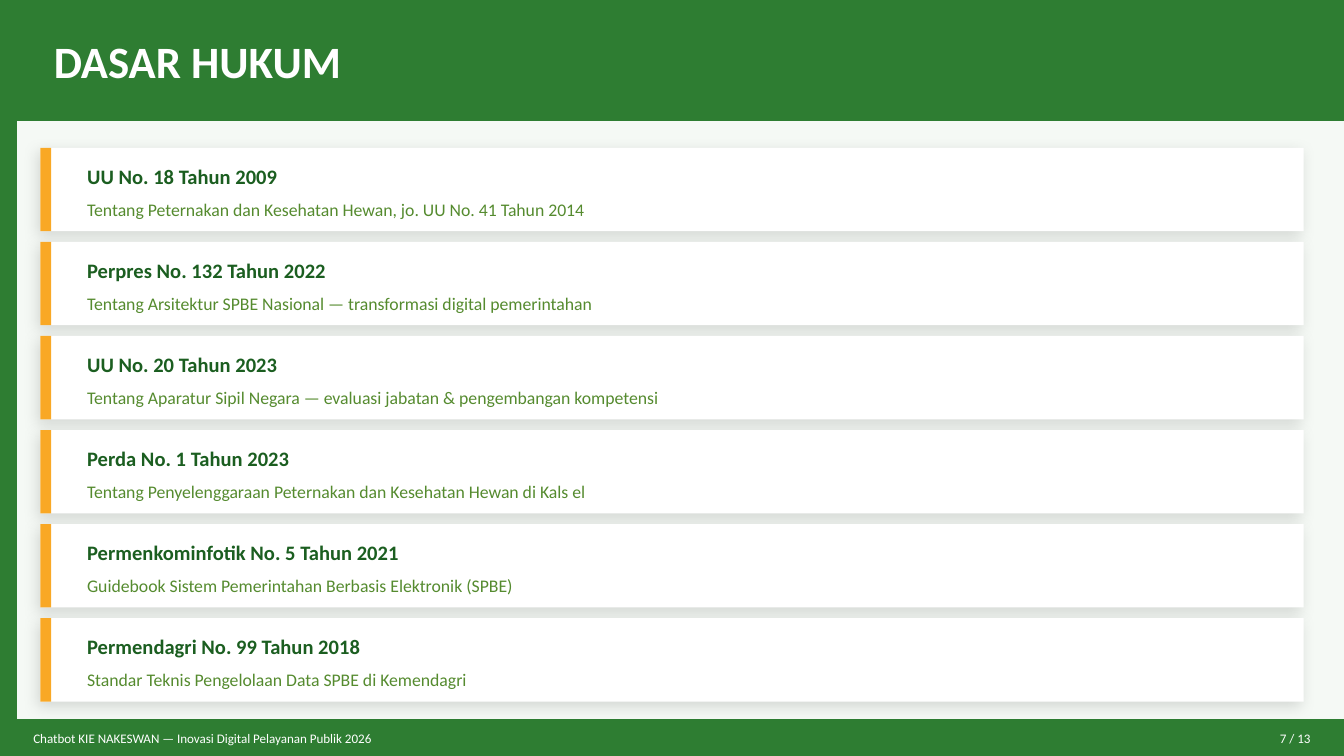
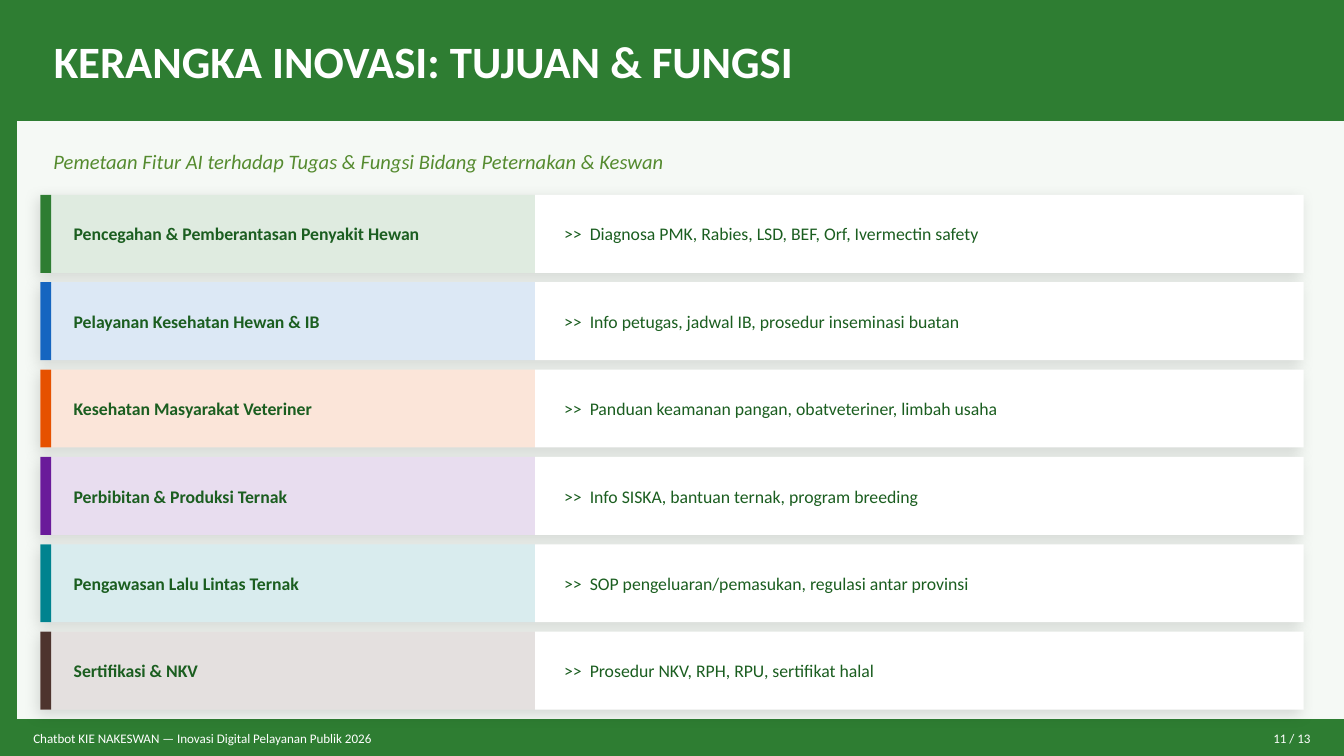
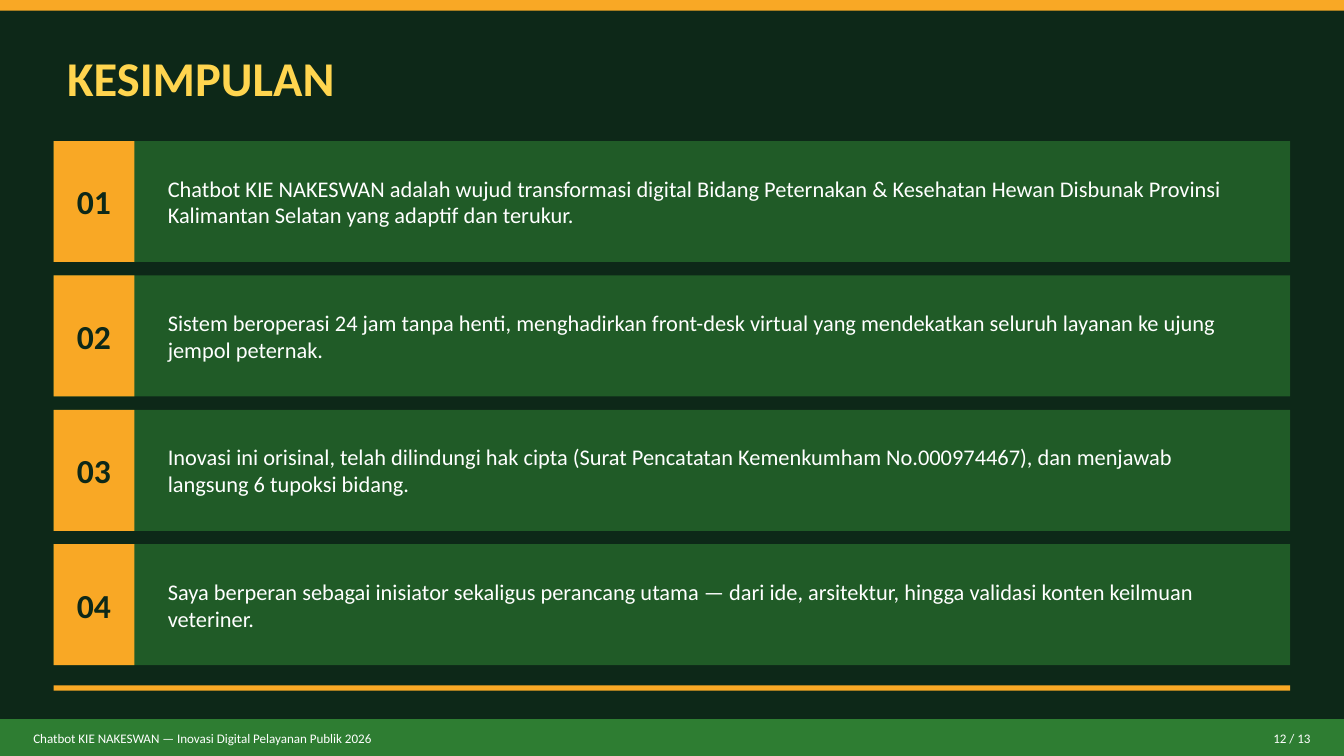
"""Builds three slides on the legal basis, framework and conclusions of a chatbot innovation."""
from lxml import etree
from pptx import Presentation
from pptx.dml.color import RGBColor
from pptx.enum import shapes, text
from pptx.oxml import ns
from pptx.util import Inches, Pt

FONT = "Calibri"
WHITE = RGBColor(0xFF, 0xFF, 0xFF)
PALE = RGBColor(0xF5, 0xF9, 0xF5)
NIGHT = RGBColor(0x0D, 0x28, 0x18)
GREEN = RGBColor(0x2E, 0x7D, 0x32)
FOREST = RGBColor(0x1B, 0x5E, 0x20)
OLIVE = RGBColor(0x55, 0x8B, 0x2F)
AMBER = RGBColor(0xF9, 0xA8, 0x25)
YELLOW = RGBColor(0xFF, 0xD5, 0x4F)
BLUE = RGBColor(0x15, 0x65, 0xC0)
ORANGE = RGBColor(0xE6, 0x51, 0x00)
PURPLE = RGBColor(0x6A, 0x1B, 0x9A)
TEAL = RGBColor(0x00, 0x83, 0x8F)
BROWN = RGBColor(0x4E, 0x34, 0x2E)

FOOTER = "Chatbot KIE NAKESWAN — Inovasi Digital Pelayanan Publik 2026"
SLIDE_HEIGHT = 5.62
TITLES = [
    ("DASAR HUKUM", "7 / 13", PALE, WHITE, 24, (0.3, 0, 9.7, 0.9)),
    ("KERANGKA INOVASI: TUJUAN & FUNGSI", "11 / 13", PALE, WHITE, 24, (0.3, 0, 9.7, 0.9)),
    ("KESIMPULAN", "12 / 13", NIGHT, YELLOW, 26, (0.4, 0.3, 9.2, 0.55)),
]
LAWS = [
    ("UU No. 18 Tahun 2009", "Tentang Peternakan dan Kesehatan Hewan, jo. UU No. 41 Tahun 2014"),
    ("Perpres No. 132 Tahun 2022", "Tentang Arsitektur SPBE Nasional — transformasi digital pemerintahan"),
    ("UU No. 20 Tahun 2023", "Tentang Aparatur Sipil Negara — evaluasi jabatan & pengembangan kompetensi"),
    ("Perda No. 1 Tahun 2023", "Tentang Penyelenggaraan Peternakan dan Kesehatan Hewan di Kals el"),
    ("Permenkominfotik No. 5 Tahun 2021", "Guidebook Sistem Pemerintahan Berbasis Elektronik (SPBE)"),
    ("Permendagri No. 99 Tahun 2018", "Standar Teknis Pengelolaan Data SPBE di Kemendagri"),
]
DUTIES = [
    (GREEN, "Pencegahan & Pemberantasan Penyakit Hewan", "Diagnosa PMK, Rabies, LSD, BEF, Orf, Ivermectin safety"),
    (BLUE, "Pelayanan Kesehatan Hewan & IB", "Info petugas, jadwal IB, prosedur inseminasi buatan"),
    (ORANGE, "Kesehatan Masyarakat Veteriner", "Panduan keamanan pangan, obatveteriner, limbah usaha"),
    (PURPLE, "Perbibitan & Produksi Ternak", "Info SISKA, bantuan ternak, program breeding"),
    (TEAL, "Pengawasan Lalu Lintas Ternak", "SOP pengeluaran/pemasukan, regulasi antar provinsi"),
    (BROWN, "Sertifikasi & NKV", "Prosedur NKV, RPH, RPU, sertifikat halal"),
]
CONCLUSIONS = [
    "Chatbot KIE NAKESWAN adalah wujud transformasi digital Bidang Peternakan & Kesehatan Hewan "
    "Disbunak Provinsi Kalimantan Selatan yang adaptif dan terukur.",
    "Sistem beroperasi 24 jam tanpa henti, menghadirkan front-desk virtual yang mendekatkan "
    "seluruh layanan ke ujung jempol peternak.",
    "Inovasi ini orisinal, telah dilindungi hak cipta (Surat Pencatatan Kemenkumham No.000974467), "
    "dan menjawab langsung 6 tupoksi bidang.",
    "Saya berperan sebagai inisiator sekaligus perancang utama — dari ide, arsitektur, hingga "
    "validasi konten keilmuan veteriner.",
]


def add_block(page, place, color, opacity=100, shadow=False):
    """Add a borderless rectangle, optionally see-through or with a soft shadow."""
    block = page.shapes.add_shape(shapes.MSO_SHAPE.RECTANGLE, *map(Inches, place))
    block.shadow.inherit = False
    block.fill.solid()
    block.fill.fore_color.rgb = color
    block.line.fill.background()
    if opacity < 100:
        tint = block.element.spPr.find(".//" + ns.qn("a:srgbClr"))
        etree.SubElement(tint, ns.qn("a:alpha"), val=str(opacity * 1000))
    if shadow:
        effects = block.element.spPr.find(ns.qn("a:effectLst"))
        outer = etree.SubElement(effects, ns.qn("a:outerShdw"), blurRad=str(Pt(8)), dist=str(Pt(3)),
                                 dir=str(135 * 60000), algn="bl", rotWithShape="0")
        shade = etree.SubElement(outer, ns.qn("a:srgbClr"), val="000000")
        etree.SubElement(shade, ns.qn("a:alpha"), val="12000")
    return block


def add_label(page, place, words, size, color, bold=False, align=text.PP_ALIGN.LEFT, box=None):
    """Write one paragraph into the given box, or into a new text box."""
    box = box or page.shapes.add_textbox(0, 0, 0, 0)
    box.left, box.top, box.width, box.height = map(Inches, place)
    frame = box.text_frame
    frame.text = words
    frame.word_wrap = True
    frame.auto_size = text.MSO_AUTO_SIZE.NONE
    frame.vertical_anchor = text.MSO_ANCHOR.MIDDLE
    para = frame.paragraphs[0]
    para.alignment = align
    for span in para.runs:
        span.font.name = FONT
        span.font.size = Pt(size)
        span.font.bold = bold
        span.font.color.rgb = color
    return para


deck = Presentation()
deck.slide_width = Inches(10)
deck.slide_height = deck.slide_width * 9 // 16

pages = []
for title, number, backdrop, title_color, title_size, title_place in TITLES:
    page = deck.slides.add_slide(deck.slide_layouts[5])
    page.background.fill.solid()
    page.background.fill.fore_color.rgb = backdrop
    if backdrop == PALE:
        side_band = add_block(page, (0, 0, 0.12, SLIDE_HEIGHT), GREEN)
        side_band.line.color.rgb = GREEN
        side_band.line.width = Pt(1)
        add_block(page, (0.12, 0, 9.88, 0.9), GREEN)
    else:
        add_block(page, (0, 0, 10, 0.08), AMBER)
    add_block(page, (0, 5.35, 10, 0.28), GREEN)
    add_label(page, (0.15, 5.35, 9.7, 0.28), FOOTER, 7, WHITE)
    add_label(page, (9.2, 5.35, 0.65, 0.28), number, 7, WHITE, align=text.PP_ALIGN.RIGHT)
    heading = page.shapes.title
    add_label(page, title_place, title, title_size, title_color, bold=True, box=heading)
    page.shapes.element.append(heading.element)
    pages.append(page)
law_page, duty_page, conclusion_page = pages

for row, (law, subject) in enumerate(LAWS):
    top = 1.1 + 0.7 * row
    add_block(law_page, (0.3, top, 9.4, 0.62), WHITE, shadow=True)
    add_block(law_page, (0.3, top, 0.08, 0.62), AMBER)
    add_label(law_page, (0.55, top + 0.07, 8.9, 0.28), law, 11, FOREST, bold=True)
    add_label(law_page, (0.55, top + 0.33, 8.9, 0.25), subject, 9.5, OLIVE)

subtitle = add_label(duty_page, (0.3, 1.05, 9.4, 0.3),
                     "Pemetaan Fitur AI terhadap Tugas & Fungsi Bidang Peternakan & Keswan", 11, OLIVE)
subtitle.runs[0].font.italic = True
for row, (color, duty, feature) in enumerate(DUTIES):
    top = 1.45 + 0.65 * row
    add_block(duty_page, (0.3, top, 9.4, 0.58), WHITE, shadow=True)
    add_block(duty_page, (0.3, top, 0.08, 0.58), color)
    add_block(duty_page, (0.38, top, 3.6, 0.58), color, opacity=15)
    add_label(duty_page, (0.45, top, 3.5, 0.58), duty, 9.5, FOREST, bold=True)
    para = add_label(duty_page, (4.1, top, 5.4, 0.58), ">>\t" + feature, 9.5, FOREST)
    tabs = etree.SubElement(para._p.get_or_add_pPr(), ns.qn("a:tabLst"))
    etree.SubElement(tabs, ns.qn("a:tab"), pos=str(Inches(0.19)), algn="l")

for row, conclusion in enumerate(CONCLUSIONS):
    top = 1.05 + row
    add_block(conclusion_page, (0.4, top, 9.2, 0.9), GREEN, opacity=60)
    add_block(conclusion_page, (0.4, top, 0.6, 0.9), AMBER)
    add_label(conclusion_page, (0.4, top, 0.6, 0.9), f"{row + 1:02}", 18, NIGHT, bold=True,
              align=text.PP_ALIGN.CENTER)
    add_label(conclusion_page, (1.15, top, 8.25, 0.9), conclusion, 12, WHITE)
add_block(conclusion_page, (0.4, 5.1, 9.2, 0.04), AMBER)

deck.save("out.pptx")
